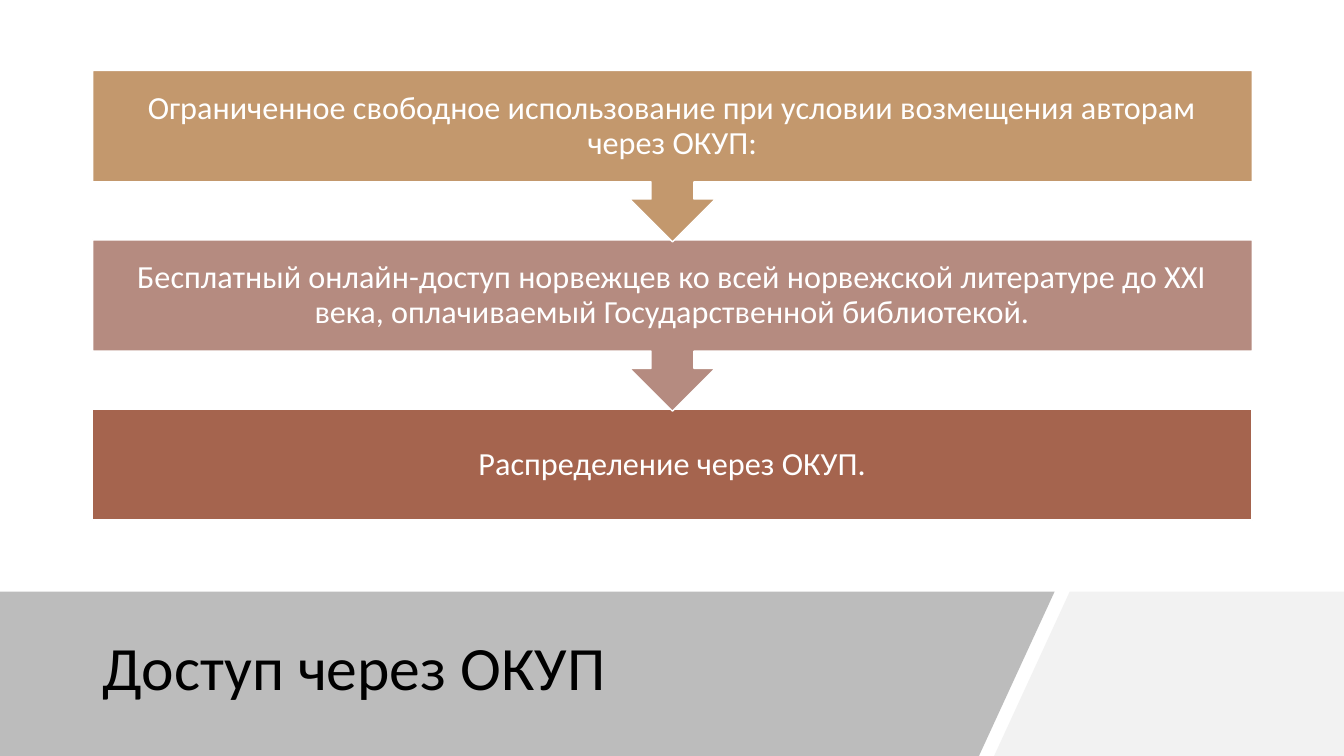
from dataclasses import dataclass

from lxml import etree
from pptx import Presentation
from pptx.dml.color import RGBColor
from pptx.enum.shapes import MSO_SHAPE
from pptx.enum.text import MSO_ANCHOR, PP_ALIGN
from pptx.oxml.ns import qn
from pptx.util import Inches, Pt

BOX = MSO_SHAPE.RECTANGLE
BOX_WITH_ARROW = MSO_SHAPE.DOWN_ARROW_CALLOUT
MIDDLE = MSO_ANCHOR.MIDDLE
LEFT, CENTER = PP_ALIGN.LEFT, PP_ALIGN.CENTER

FONT = "Calibri"
COLORS = {
    "white": "FFFFFF",
    "black": "000000",
    "sand": "C3986D",
    "rose": "B58B80",
    "brick": "A5644E",
    "band": "595959",
    "corner": "F2F2F2",
}

SLIDE_WIDTH, SLIDE_HEIGHT = 13.33, 7.5
BAND_TOP = 5.87
STEP_LEFT, STEP_TOP, STEP_WIDTH = 0.92, 0.7, 11.5
STEP_PITCH = 1.68
STEP_PADDING = 0.18


@dataclass
class Step:
    text: str
    color: str
    kind: MSO_SHAPE
    height: float


@dataclass
class Panel:
    outline: list[tuple[float, float]]
    color: str
    opacity: int


STEPS = [
    Step("Ограниченное свободное использование при условии возмещения авторам через ОКУП:",
         "sand", BOX_WITH_ARROW, 1.7),
    Step("Бесплатный онлайн-доступ норвежцев ко всей норвежской литературе до XXI века, "
         "оплачиваемый Государственной библиотекой.",
         "rose", BOX_WITH_ARROW, 1.7),
    Step("Распределение через ОКУП.", "brick", BOX, 1.1),
]

PANELS = [
    Panel([(10.61, BAND_TOP), (SLIDE_WIDTH, BAND_TOP),
           (SLIDE_WIDTH, SLIDE_HEIGHT), (9.86, SLIDE_HEIGHT)], "corner", 100),
    Panel([(0, BAND_TOP), (10.46, BAND_TOP),
           (9.71, SLIDE_HEIGHT), (0, SLIDE_HEIGHT)], "band", 40),
]


def rgb(name: str) -> RGBColor:
    return RGBColor.from_string(COLORS[name])


def write(shape, text: str, size: int, color: str, align: PP_ALIGN) -> None:
    frame = shape.text_frame
    frame.word_wrap = True
    frame.vertical_anchor = MIDDLE
    frame.text = text
    paragraph = frame.paragraphs[0]
    paragraph.alignment = align
    paragraph.line_spacing = 0.9
    font = paragraph.runs[0].font
    font.name, font.size = FONT, Pt(size)
    font.color.rgb = rgb(color)


def draw_panel(slide, panel: Panel) -> None:
    start, *rest = [(Inches(x), Inches(y)) for x, y in panel.outline]
    builder = slide.shapes.build_freeform(*start)
    builder.add_line_segments(rest, close=True)
    shape = builder.convert_to_shape()
    shape.shadow.inherit = False
    shape.line.fill.background()
    shape.fill.solid()
    shape.fill.fore_color.rgb = rgb(panel.color)
    if panel.opacity < 100:
        fill_color = shape.fill._xPr.find(qn("a:solidFill"))[0]
        etree.SubElement(fill_color, qn("a:alpha"), val=str(panel.opacity * 1000))


def draw_step(slide, step: Step, top: float) -> None:
    shape = slide.shapes.add_shape(
        step.kind, Inches(STEP_LEFT), Inches(top), Inches(STEP_WIDTH), Inches(step.height))
    shape.shadow.inherit = False
    shape.fill.solid()
    shape.fill.fore_color.rgb = rgb(step.color)
    shape.line.color.rgb = rgb("white")
    shape.line.width = Pt(1)
    frame = shape.text_frame
    frame.margin_left = frame.margin_right = Inches(STEP_PADDING)
    frame.margin_top = frame.margin_bottom = Inches(STEP_PADDING)
    write(shape, step.text, 23, "white", CENTER)


def main() -> None:
    prs = Presentation()
    prs.slide_width, prs.slide_height = Inches(SLIDE_WIDTH), Inches(SLIDE_HEIGHT)
    slide = prs.slides.add_slide(prs.slide_layouts[6])

    # Bottom band and its slanted corner
    for panel in PANELS:
        draw_panel(slide, panel)

    # Title on the band
    title = slide.shapes.add_textbox(Inches(0.92), Inches(6.05), Inches(8.83), Inches(1.2))
    write(title, "Доступ через ОКУП", 44, "black", LEFT)

    # Process steps, lowest first so that each arrow tip lies over the next box
    for index, step in reversed(list(enumerate(STEPS))):
        draw_step(slide, step, STEP_TOP + index * STEP_PITCH)

    prs.save("out.pptx")


if __name__ == "__main__":
    main()
